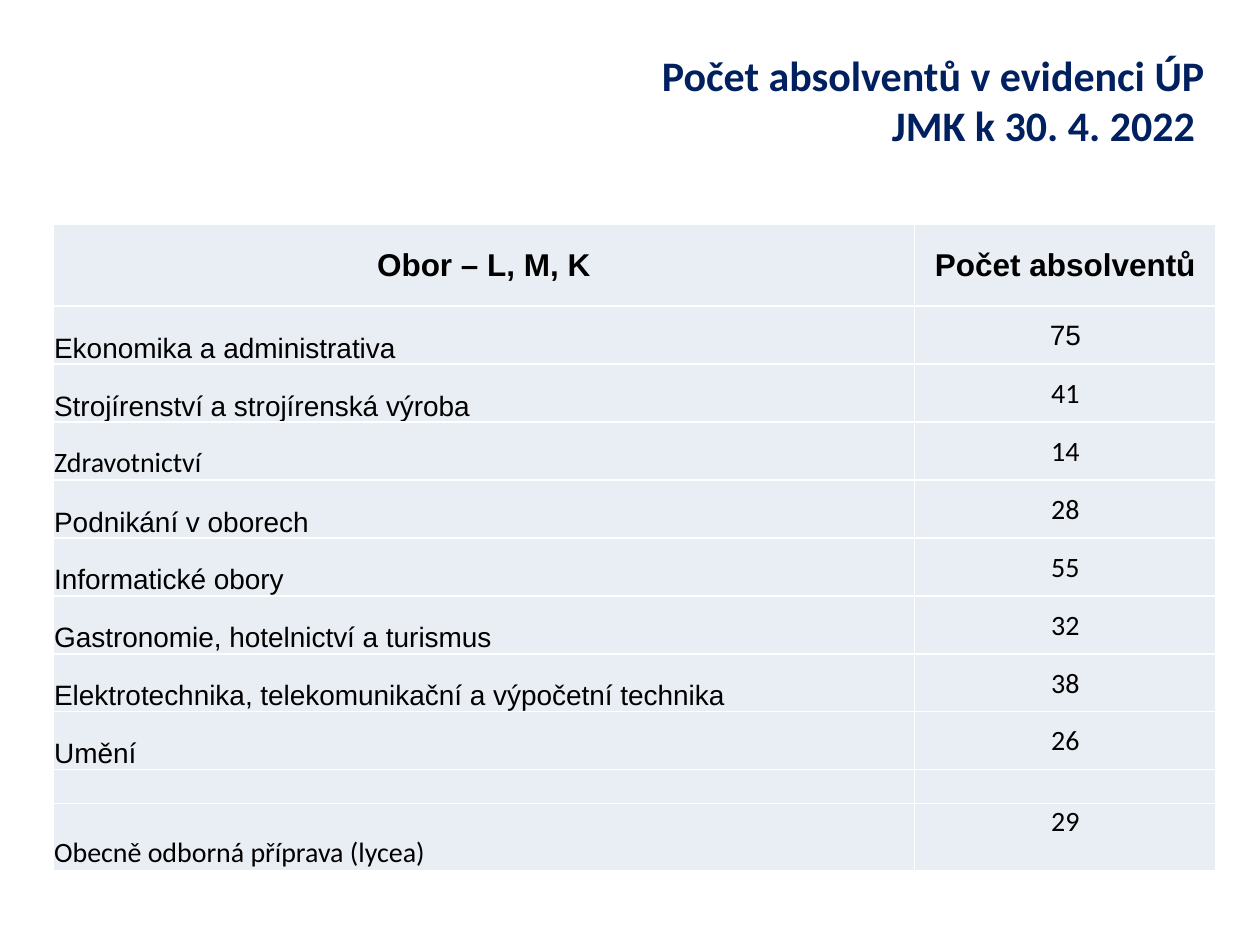
from lxml.etree import SubElement as Sub
from pptx import Presentation
from pptx.dml.color import RGBColor
from pptx.enum.text import MSO_ANCHOR as Anchor, PP_ALIGN as Align
from pptx.oxml.ns import qn
from pptx.util import Inches, Pt

NAVY = RGBColor(0x00, 0x20, 0x60)
BLACK = RGBColor(0x00, 0x00, 0x00)
PALE = RGBColor(0xE9, 0xED, 0xF4)
WHITE = RGBColor(0xFF, 0xFF, 0xFF)
SANS, BODY = "Arial", "Calibri"

HEAD = ("Obor – L, M, K", "Počet absolventů")
# Field, its font, count, its font
ROWS = [
    ("Ekonomika a administrativa", SANS, "75", SANS),
    ("Strojírenství a strojírenská výroba", SANS, "41", BODY),
    ("Zdravotnictví", BODY, "14", BODY),
    ("Podnikání v oborech", SANS, "28", BODY),
    ("Informatické obory", SANS, "55", BODY),
    ("Gastronomie, hotelnictví a turismus", SANS, "32", BODY),
    ("Elektrotechnika, telekomunikační a výpočetní technika", SANS, "38", BODY),
    ("Umění", SANS, "26", BODY),
    ("", BODY, "", BODY),
    ("Obecně odborná příprava (lycea)", BODY, "29", BODY),
]
COLS = (6.84, 2.39)
TALL = [0.65] + [0.46] * 8 + [0.27, 0.53]


def write(frame, text, font=BODY, size=16, color=BLACK, bold=False, align=Align.LEFT):
    frame.text = text
    for para in frame.paragraphs:
        para.alignment = align
        for run in para.runs:
            face = run.font
            face.name, face.size, face.bold = font, Pt(size), bold
            face.color.rgb = color
        if not text:  # an empty line keeps its own height
            Sub(para._p, qn("a:endParaRPr"), sz=str(size * 100))


def edge(cell, color=WHITE, width=1):
    props = cell._tc.get_or_add_tcPr()
    for spot, side in enumerate(("lnL", "lnR", "lnT", "lnB")):
        line = Sub(props, qn("a:" + side), w=str(Pt(width)))
        Sub(Sub(line, qn("a:solidFill")), qn("a:srgbClr"), val=str(color))
        props.insert(spot, line)


def fill_cell(cell, text, anchor=Anchor.MIDDLE, **style):
    cell.fill.solid()
    cell.fill.fore_color.rgb = PALE
    cell.margin_left = cell.margin_right = cell.margin_top = Inches(0.01)
    cell.margin_bottom = 0
    cell.vertical_anchor = anchor
    write(cell.text_frame, text, **style)
    edge(cell)


def add_title(slide):
    title = slide.shapes.title
    title.left, title.top = Inches(2.42), Inches(0.34)
    title.width, title.height = Inches(7.24), Inches(1.26)
    frame = title.text_frame
    frame.word_wrap = True
    frame.vertical_anchor = Anchor.TOP
    write(frame, "Počet absolventů v evidenci ÚP\vJMK k 30. 4. 2022 ",
          size=24, color=NAVY, bold=True, align=Align.RIGHT)


def add_grid(slide):
    grid = slide.shapes.add_table(
        len(TALL), len(COLS), Inches(0.42), Inches(1.78),
        Inches(sum(COLS)), Inches(sum(TALL))).table
    grid.horz_banding = False
    for col, width in zip(grid.columns, COLS):
        col.width = Inches(width)
    for row, height in zip(grid.rows, TALL):
        row.height = Inches(height)

    # Header row
    for col, text in enumerate(HEAD):
        fill_cell(grid.cell(0, col), text, font=SANS, size=18, bold=True,
                  align=Align.CENTER)

    # Fields and counts; the last count sits at the top of its tall row
    for row, (field, face, count, digits) in enumerate(ROWS, 1):
        last = row == len(ROWS)
        size = 16 if field else 12
        fill_cell(grid.cell(row, 0), field, Anchor.BOTTOM, font=face, size=size)
        fill_cell(grid.cell(row, 1), count, Anchor.TOP if last else Anchor.MIDDLE,
                  font=digits, size=size, align=Align.CENTER)


def main():
    deck = Presentation()
    deck.slide_width, deck.slide_height = Inches(10), Inches(7.5)
    slide = deck.slides.add_slide(deck.slide_layouts[5])
    add_title(slide)
    add_grid(slide)
    deck.save("out.pptx")


if __name__ == "__main__":
    main()
